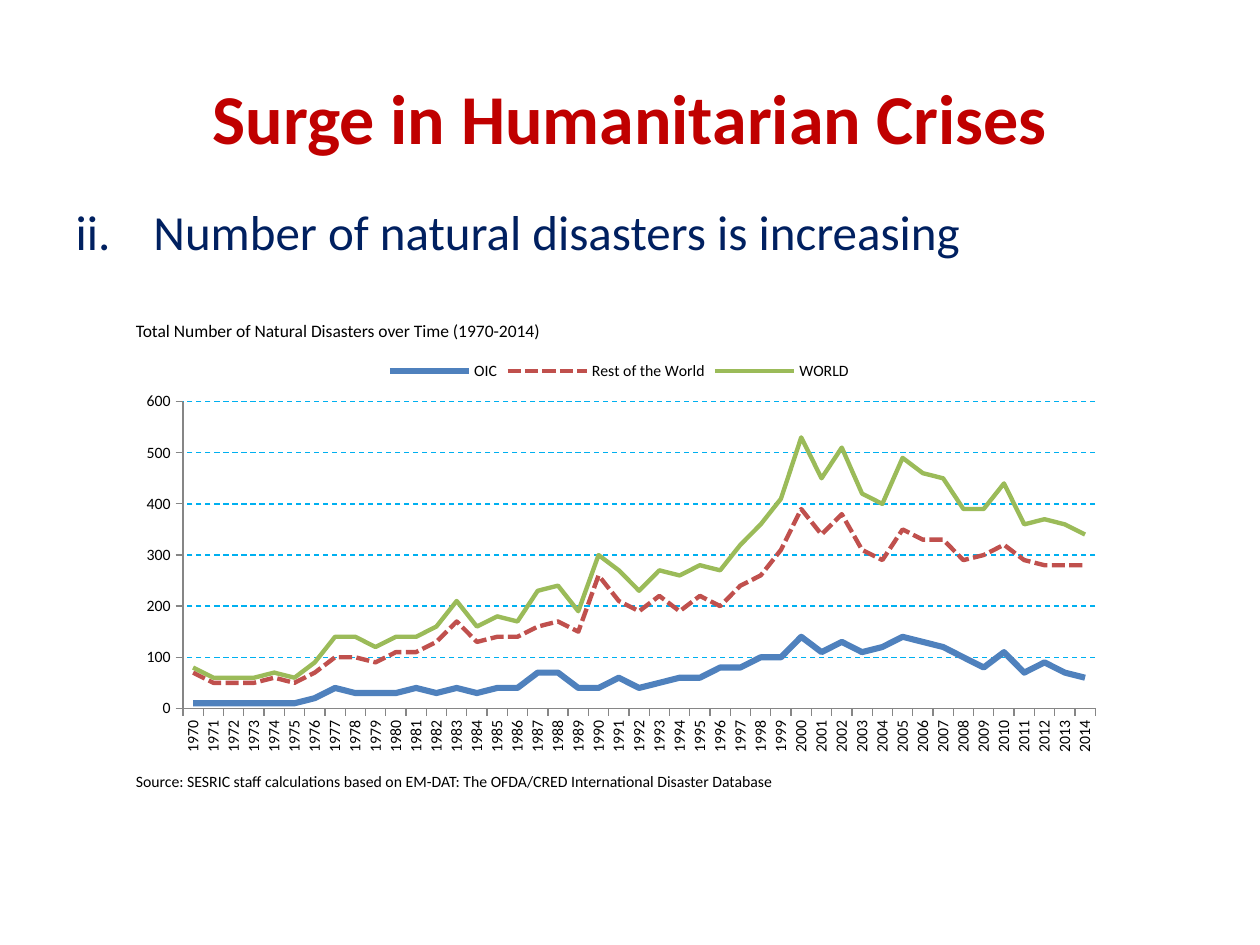
import pptx
import pptx.chart.data
import pptx.dml.color
import pptx.enum.chart
import pptx.enum.dml
import pptx.enum.text
import pptx.oxml
import pptx.oxml.ns
import pptx.util

Cm, Pt = pptx.util.Cm, pptx.util.Pt
RGB = pptx.dml.color.RGBColor.from_string
DASH = pptx.enum.dml.MSO_LINE
ALIGN = pptx.enum.text.PP_ALIGN

# Content
TITLE = "Surge in Humanitarian Crises"
POINT = "Number of natural disasters is increasing"
CAPTION = "Total Number of Natural Disasters over Time (1970-2014)"
SOURCE = ("Source: SESRIC staff calculations based on EM-DAT: "
          "The OFDA/CRED International Disaster Database")
YEARS = [str(y) for y in range(1970, 2015)]
SERIES = [
    # name, colour, line width, dash, values
    ("OIC", "4F81BD", 3.5, DASH.SOLID,
     [10, 10, 10, 10, 10, 10, 20, 40, 30, 30, 30, 40, 30, 40, 30,
      40, 40, 70, 70, 40, 40, 60, 40, 50, 60, 60, 80, 80, 100, 100,
      140, 110, 130, 110, 120, 140, 130, 120, 100, 80, 110, 70, 90, 70, 60]),
    ("Rest of the World", "C0504D", 2.5, DASH.SQUARE_DOT,
     [70, 50, 50, 50, 60, 50, 70, 100, 100, 90, 110, 110, 130, 170, 130,
      140, 140, 160, 170, 150, 260, 210, 190, 220, 190, 220, 200, 240, 260, 310,
      390, 340, 380, 310, 290, 350, 330, 330, 290, 300, 320, 290, 280, 280, 280]),
    ("WORLD", "9BBB59", 2.5, DASH.SOLID,
     [80, 60, 60, 60, 70, 60, 90, 140, 140, 120, 140, 140, 160, 210, 160,
      180, 170, 230, 240, 190, 300, 270, 230, 270, 260, 280, 270, 320, 360, 410,
      530, 450, 510, 420, 400, 490, 460, 450, 390, 390, 440, 360, 370, 360, 340]),
]

# Theme: colours, type sizes and places (left, top, width, height in cm)
THEME = {
    "font": "Calibri",
    "title": {"size": 40, "color": "C00000", "bold": True},
    "body": {"size": 28, "color": "002060", "bold": False},
    "caption": {"size": 10, "color": "000000", "bold": False},
    "source": {"size": 9, "color": "000000", "bold": False},
    "chart": {"size": 9, "color": "000000", "bold": False},
    "grid": "00B0F0",
    "axis": "868686",
}
PLACES = {
    "title": (1.27, 0.76, 22.86, 3.18),
    "body": (1.27, 3.94, 22.86, 12.57),
    "caption": (2.49, 6.32, 13.79, 0.66),
    "chart": (2.49, 7.01, 19.99, 8.36),
    "source": (2.49, 15.44, 19.74, 1.02),
}
PLOT = {"x": 0.06, "y": 0.13, "w": 0.92, "h": 0.74}  # shares of the chart
HANG = Cm(1.57)


def box(name):
    return [Cm(v) for v in PLACES[name]]


def style_font(font, role):
    look = THEME[role]
    values = {"name": THEME["font"], "size": Pt(look["size"]), "bold": look["bold"]}
    for key, value in values.items():
        setattr(font, key, value)
    font.color.rgb = RGB(look["color"])


def write(sp, role, text):
    for key, value in zip(("left", "top", "width", "height"), box(role)):
        setattr(sp, key, value)
    tf = sp.text_frame
    tf.word_wrap = True
    p = tf.paragraphs[0]
    r = p.add_run()
    r.text = text
    style_font(r.font, role)
    return p


def style_line(line, color, width, dash=DASH.SOLID):
    line.color.rgb = RGB(color)
    line.width = Pt(width)
    line.dash_style = dash


prs = pptx.Presentation()
prs.slide_width, prs.slide_height = Cm(25.4), Cm(19.05)
s = prs.slides.add_slide(prs.slide_layouts[1])

# Title
p = write(s.shapes.title, "title", TITLE)
p.alignment = ALIGN.CENTER
s.shapes.title.text_frame.vertical_anchor = pptx.enum.text.MSO_ANCHOR.MIDDLE

# Numbered point, starting at ii.
p = write(s.placeholders[1], "body", POINT)
p.space_after = Pt(12)
pPr = p._p.get_or_add_pPr()
for key, value in {"marL": HANG, "indent": -HANG}.items():
    pPr.set(key, str(int(value)))
pPr.append(pptx.oxml.parse_xml(
    f'<a:buAutoNum {pptx.oxml.ns.nsdecls("a")} type="romanLcPeriod" startAt="2"/>'))

# Chart caption and source
for role, text in (("caption", CAPTION), ("source", SOURCE)):
    write(s.shapes.add_textbox(*box(role)), role, text)

# Line chart
data = pptx.chart.data.CategoryChartData()
data.categories = YEARS
for name, _, _, _, values in SERIES:
    data.add_series(name, values)
chart = s.shapes.add_chart(
    pptx.enum.chart.XL_CHART_TYPE.LINE, *box("chart"), data).chart
style_font(chart.font, "chart")
chart.has_title = False
chart.has_legend = True
chart.legend.position = pptx.enum.chart.XL_LEGEND_POSITION.TOP
chart.legend.include_in_layout = False
chart.plots[0].vary_by_categories = False

for ser, (_, color, width, dash, _) in zip(chart.plots[0].series, SERIES):
    ser.smooth = False
    ser.marker.style = pptx.enum.chart.XL_MARKER_STYLE.NONE
    style_line(ser.format.line, color, width, dash)

# Axes and gridlines
cat, val = chart.category_axis, chart.value_axis
for axis in (cat, val):
    axis.major_tick_mark = pptx.enum.chart.XL_TICK_MARK.OUTSIDE
    style_line(axis.format.line, THEME["axis"], 0.75)
    style_font(axis.tick_labels.font, "chart")
for key, value in {"minimum_scale": 0, "maximum_scale": 600, "major_unit": 100}.items():
    setattr(val, key, value)
style_line(val.major_gridlines.format.line, THEME["grid"], 0.75, DASH.DASH)
cat._element.txPr.bodyPr.set("rot", "-5400000")

# Fixed plot area inside the chart
modes = '<c:layoutTarget val="inner"/><c:xMode val="edge"/><c:yMode val="edge"/>'
sizes = "".join(f'<c:{key} val="{value}"/>' for key, value in PLOT.items())
plot_area = chart._chartSpace.chart.plotArea
for old in plot_area.findall(pptx.oxml.ns.qn("c:layout")):
    plot_area.remove(old)
plot_area.insert(0, pptx.oxml.parse_xml(
    f'<c:layout {pptx.oxml.ns.nsdecls("c")}>'
    f'<c:manualLayout>{modes}{sizes}</c:manualLayout></c:layout>'))

prs.save("out.pptx")
